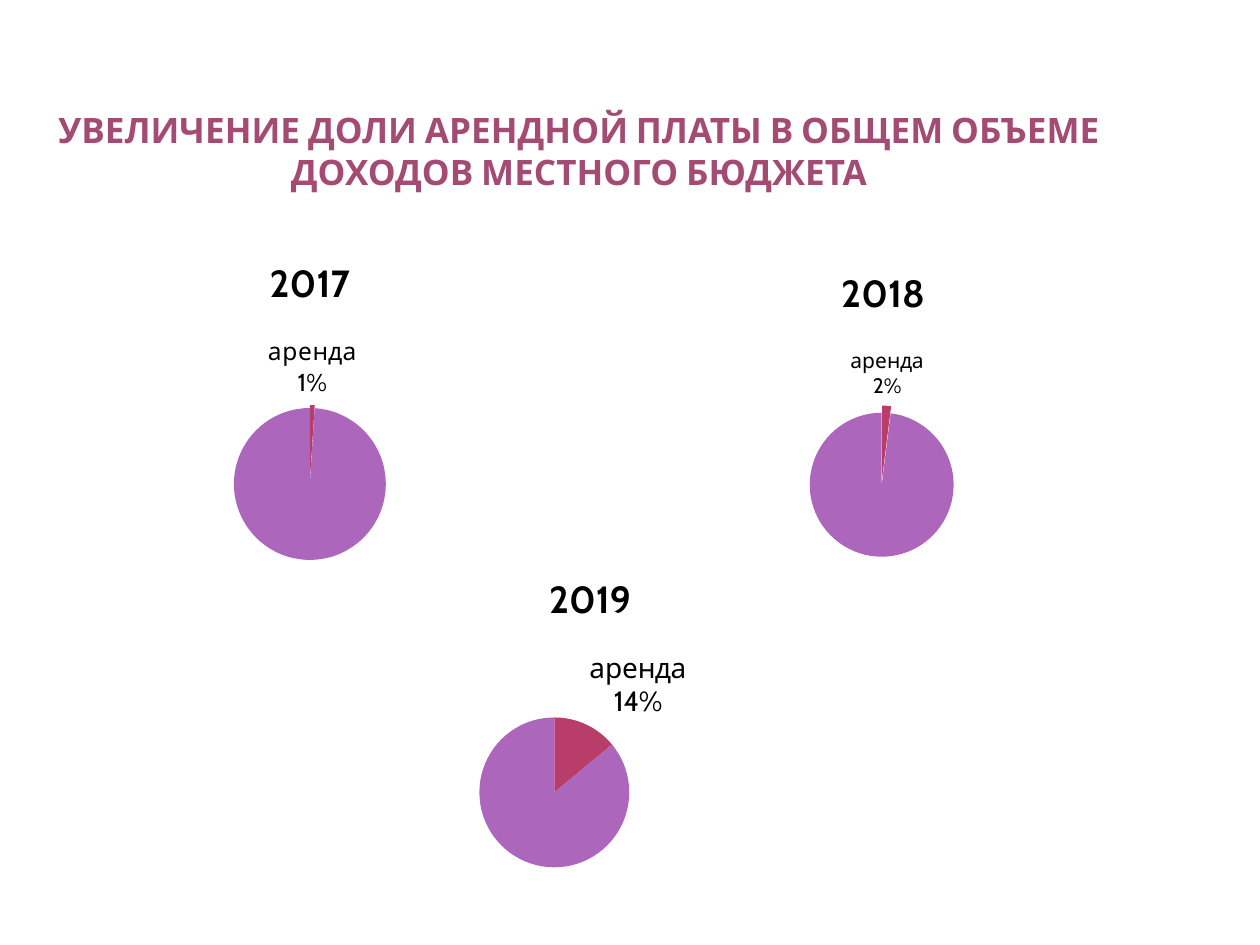
from dataclasses import dataclass

import pptx
import pptx.chart.data
import pptx.dml.color
import pptx.enum.chart
import pptx.enum.text
import pptx.oxml.ns
import pptx.util
from lxml import etree
from pptx.util import Inches

qn = pptx.oxml.ns.qn


@dataclass(frozen=True)
class Theme:
    font: str = "Cabin"
    heading: str = "A34B73"
    outline: str = "5E1A50"
    text: str = "000000"
    rent: str = "B83D68"
    total: str = "AC66BB"
    heading_size: float = 20
    chart_size: float = 18
    year_size: float = 21.6


@dataclass(frozen=True)
class YearPie:
    year: str
    rent_share: int
    frame: tuple[float, float, float, float]   # left, top, width, height
    centre: tuple[float, float]                # pie centre on the page
    diameter: float                            # including the explosion
    label_size: float
    explosion: int = 0


THEME = Theme()
CATEGORIES = ("аренда", "всего доходов")
PIES = (
    YearPie("2017", 1, (0.16, 1.87, 4.6, 2.7), (2.46, 3.83), 1.23, 14, 2),
    YearPie("2018", 2, (4.02, 1.95, 5.98, 2.58), (7.0, 3.82), 1.2, 12, 5),
    YearPie("2019", 14, (1.8, 4.38, 5.77, 2.66), (4.4, 6.29), 1.19, 16),
)


def rgb(colour: str) -> pptx.dml.color.RGBColor:
    return pptx.dml.color.RGBColor.from_string(colour)


def style_font(font, size: float, colour: str = THEME.text, bold: bool = False) -> None:
    font.name = THEME.font
    font.size = pptx.util.Pt(size)
    font.bold = bold
    font.color.rgb = rgb(colour)


def write_text(frame, text: str, **font_format) -> None:
    para = frame.paragraphs[0]
    para.alignment = pptx.enum.text.PP_ALIGN.CENTER
    span = para.add_run()
    span.text = text
    style_font(span.font, **font_format)


def add_heading(page, text: str) -> None:
    box = page.shapes.add_textbox(Inches(0.28), Inches(0.3), Inches(8.63), Inches(1.73))
    frame = box.text_frame
    frame.word_wrap = True
    frame.vertical_anchor = pptx.enum.text.MSO_ANCHOR.BOTTOM
    frame.margin_left = frame.margin_right = Inches(0.05)
    frame.margin_top = 0
    frame.margin_bottom = Inches(0.5)
    write_text(frame, text, size=THEME.heading_size, colour=THEME.heading, bold=True)
    # Hairline outline around the letters
    properties = frame.paragraphs[0].runs[0].font._element
    line = etree.Element(qn("a:ln"), w="500")
    fill = etree.SubElement(line, qn("a:solidFill"))
    etree.SubElement(fill, qn("a:srgbClr"), val=THEME.outline)
    properties.insert(0, line)


def place_plot(chart, pie: YearPie) -> None:
    """Fix the pie's square inside the chart frame."""
    left, top, width, height = pie.frame
    radius = pie.diameter / 2
    values = {
        "layoutTarget": "inner", "xMode": "edge", "yMode": "edge",
        "x": (pie.centre[0] - radius - left) / width,
        "y": (pie.centre[1] - radius - top) / height,
        "w": pie.diameter / width,
        "h": pie.diameter / height,
    }
    area = chart._chartSpace.chart.plotArea
    layout = area.find(qn("c:layout"))
    if layout is None:
        layout = etree.Element(qn("c:layout"))
        area.insert(0, layout)
    manual = etree.SubElement(layout, qn("c:manualLayout"))
    for name, value in values.items():
        etree.SubElement(manual, qn(f"c:{name}"), val=str(value))


def add_pie(page, pie: YearPie) -> None:
    data = pptx.chart.data.CategoryChartData()
    data.categories = CATEGORIES
    data.add_series(pie.year, (pie.rent_share, 100 - pie.rent_share))
    chart = page.shapes.add_chart(
        pptx.enum.chart.XL_CHART_TYPE.PIE, *map(Inches, pie.frame), data).chart
    style_font(chart.font, THEME.chart_size)
    chart.has_legend = False
    chart.has_title = True
    write_text(chart.chart_title.text_frame, pie.year, size=THEME.year_size, bold=True)
    chart.chart_title.include_in_layout = False
    place_plot(chart, pie)

    # Slices
    plot = chart.plots[0]
    plot.vary_by_categories = True
    series = plot.series[0]
    if pie.explosion:
        explosion = etree.Element(qn("c:explosion"), val=str(pie.explosion))
        series._element.find(qn("c:tx")).addnext(explosion)
    for index, colour in enumerate((THEME.rent, THEME.total)):
        fill = series.points[index].format.fill
        fill.solid()
        fill.fore_color.rgb = rgb(colour)

    # Only the rent slice is labelled
    labels = series.data_labels
    labels.show_category_name = labels.show_percentage = True
    labels.show_value = False
    labels.number_format = "0%"
    labels.number_format_is_linked = False
    labels.position = pptx.enum.chart.XL_LABEL_POSITION.OUTSIDE_END
    style_font(labels.font, pie.label_size)
    hidden = etree.Element(qn("c:dLbl"))
    etree.SubElement(hidden, qn("c:idx"), val="1")
    etree.SubElement(hidden, qn("c:delete"), val="1")
    labels._element.insert(0, hidden)


def main() -> None:
    deck = pptx.Presentation()
    deck.slide_width, deck.slide_height = Inches(10), Inches(7.5)
    page = deck.slides.add_slide(deck.slide_layouts[6])
    add_heading(page, "УВЕЛИЧЕНИЕ ДОЛИ АРЕНДНОЙ ПЛАТЫ В ОБЩЕМ ОБЪЕМЕ ДОХОДОВ МЕСТНОГО БЮДЖЕТА")
    for pie in PIES:
        add_pie(page, pie)
    deck.save("out.pptx")


if __name__ == "__main__":
    main()
